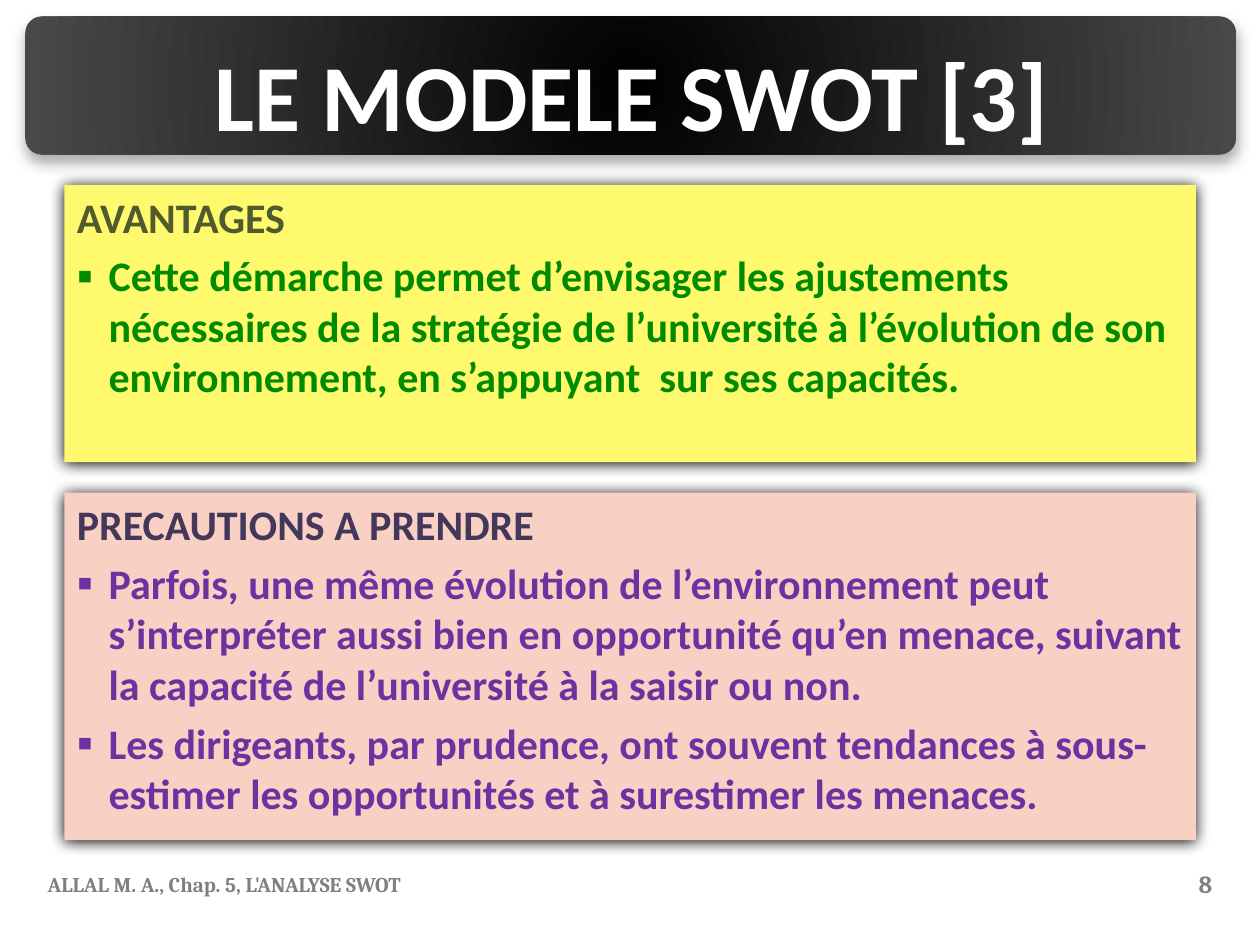
from dataclasses import dataclass

from pptx import Presentation
from pptx import util as u
from pptx.dml.color import RGBColor
from pptx.enum import shapes, text
from pptx.oxml import parse_xml
from pptx.oxml.ns import nsdecls


@dataclass(frozen=True)
class Theme:
    sans: str = "Calibri"
    serif: str = "Cambria"
    title: int = 54
    body: int = 24
    foot: int = 12
    page: int = 14
    white: str = "FFFFFF"
    black: str = "000000"
    dark: str = "494949"
    gray: str = "808080"
    yellow: str = "FFF96D"
    olive: str = "4F5B2C"
    green: str = "008A00"
    pink: str = "F9D0C4"
    plum: str = "43375A"
    purple: str = "7030A0"


THEME = Theme()
RIGHT = text.PP_ALIGN.RIGHT
LEFT = text.PP_ALIGN.LEFT
MIDDLE = text.MSO_ANCHOR.MIDDLE


def make(tag, attrs="", inner=""):
    return parse_xml(f"<a:{tag} {nsdecls('a')} {attrs}>{inner}</a:{tag}>")


def color(value):
    return f'<a:srgbClr val="{value}"/>'


def write(para, words, size, hue, face=THEME.sans):
    run = para.add_run()
    run.text = words
    font = run.font
    font.name, font.size, font.bold = face, u.Pt(size), True
    font.color.rgb = RGBColor.from_string(hue)


def shade(shape, alpha, blur, dist):
    shape.shadow.inherit = False
    effects = shape._element.spPr.find(".//{*}effectLst")
    tint = (f'<a:srgbClr val="{THEME.black}">'
            f'<a:alpha val="{alpha * 1000}"/></a:srgbClr>')
    effects.append(make(
        "outerShdw",
        f'blurRad="{u.Pt(blur)}" dist="{u.Pt(dist)}" dir="5400000" '
        'algn="ctr" rotWithShape="0"', tint))


def block(slide, kind, box):
    shape = slide.shapes.add_shape(kind, *map(u.Cm, box))
    shape.line.fill.background()
    return shape


def label(slide, box, words, size, hue, face, align, anchor=MIDDLE):
    frame = slide.shapes.add_textbox(*map(u.Cm, box)).text_frame
    frame.word_wrap = True
    frame.vertical_anchor = anchor
    para = frame.paragraphs[0]
    para.alignment = align
    write(para, words, size, hue, face)


def banner(slide, box, words):
    left, top, width, height = box
    bar = block(slide, shapes.MSO_SHAPE.ROUNDED_RECTANGLE, box)
    bar.adjustments[0] = 0.12
    bar.fill.background()
    props = bar._element.spPr
    stops = "".join(f'<a:gs pos="{spot}">{color(hue)}</a:gs>'
                    for spot, hue in ((0, THEME.black), (100000, THEME.dark)))
    props.replace(props.find("{*}noFill"), make(
        "gradFill", 'rotWithShape="1"',
        f'<a:gsLst>{stops}</a:gsLst><a:path path="circle">'
        '<a:fillToRect l="40000" t="100000" r="40000" b="100000"/></a:path>'))
    shade(bar, 32, 8, 4)
    label(slide, (left - 0.08, top + 0.3, width + 0.2, height - 0.23), words,
          THEME.title, THEME.white, THEME.sans, text.PP_ALIGN.CENTER,
          text.MSO_ANCHOR.TOP)


def bullet(para, hue):
    props = para._p.get_or_add_pPr()
    indent = u.Cm(0.64)
    props.set("marL", str(indent))
    props.set("indent", str(-indent))
    props.append(make("buClr", inner=color(hue)))
    props.append(make("buSzPct", 'val="110000"'))
    props.append(make("buFont", 'typeface="Arial"'))
    props.append(make("buChar", 'char="▪"'))


def panel(slide, box, fill, head, points, tone, hue):
    card = block(slide, shapes.MSO_SHAPE.RECTANGLE, box)
    card.fill.solid()
    card.fill.fore_color.rgb = RGBColor.from_string(fill)
    shade(card, 100, 8.5, 1)
    frame = card.text_frame
    frame.word_wrap = True
    frame.vertical_anchor = text.MSO_ANCHOR.TOP
    para = frame.paragraphs[0]
    para.alignment = LEFT
    write(para, head, THEME.body, tone)
    for point in points:
        para = frame.add_paragraph()
        para.alignment = LEFT
        para.space_before = u.Pt(THEME.body * 0.2)
        bullet(para, hue)
        write(para, point, THEME.body, hue)


def footer(slide, box, words, page):
    left, top, width, height = box
    side = 1.52
    label(slide, (left, top, 17.4, height), words,
          THEME.foot, THEME.gray, THEME.serif, LEFT)
    label(slide, (left + width - side, top, side, height), page,
          THEME.page, THEME.gray, THEME.serif, RIGHT)


def main():
    deck = Presentation()
    deck.slide_width, deck.slide_height = u.Cm(25.4), u.Cm(19.05)
    slide = deck.slides.add_slide(deck.slide_layouts[6])
    banner(slide, (0.51, 0.33, 24.41, 2.79), "LE MODELE SWOT [3]")
    panel(slide, (1.3, 3.73, 22.81, 5.59), THEME.yellow, "AVANTAGES", [
        "Cette démarche permet d’envisager les ajustements nécessaires de la "
        "stratégie de l’université à l’évolution de son environnement, en "
        "s’appuyant  sur ses capacités.",
    ], THEME.olive, THEME.green)
    panel(slide, (1.3, 9.93, 22.81, 7.01), THEME.pink, "PRECAUTIONS A PRENDRE", [
        "Parfois, une même évolution de l’environnement peut s’interpréter "
        "aussi bien en opportunité qu’en menace, suivant la capacité de "
        "l’université à la saisir ou non.",
        "Les dirigeants, par prudence, ont souvent tendances à sous-estimer "
        "les opportunités et à surestimer les menaces.",
    ], THEME.plum, THEME.purple)
    footer(slide, (0.71, 17.32, 23.98, 1),
           "ALLAL M. A., Chap. 5, L'ANALYSE SWOT", "8")
    deck.save("out.pptx")


if __name__ == "__main__":
    main()
